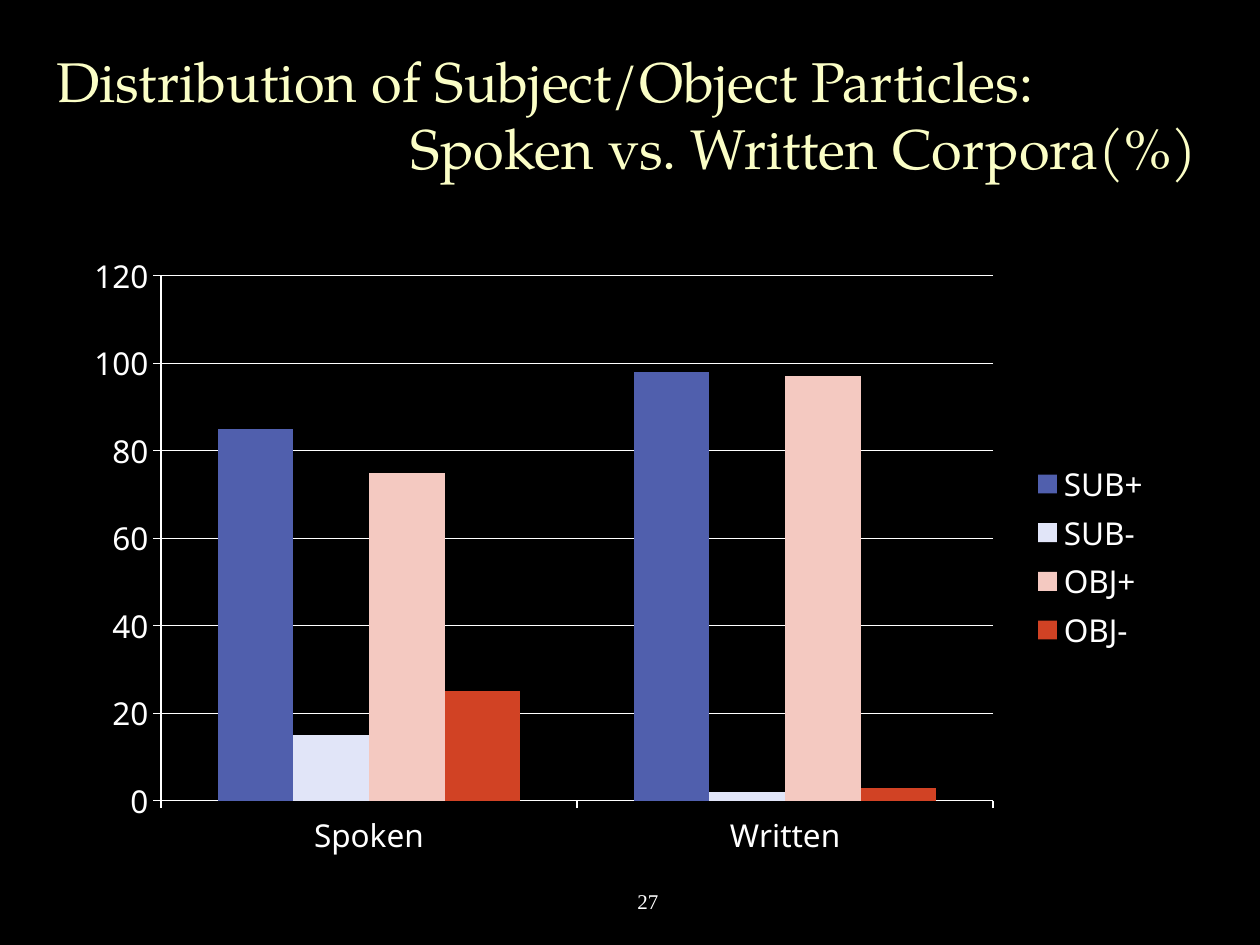
from dataclasses import dataclass

from lxml.etree import SubElement
from pptx import Presentation
from pptx.chart.data import CategoryChartData
from pptx.dml.color import RGBColor
from pptx.enum.chart import XL_CHART_TYPE as ChartType
from pptx.enum.chart import XL_LEGEND_POSITION as LegendPosition
from pptx.enum.chart import XL_TICK_MARK as TickMark
from pptx.enum.text import MSO_ANCHOR as Anchor
from pptx.enum.text import PP_ALIGN as Align
from pptx.oxml.ns import qn
from pptx.util import Cm, Pt

BLACK = RGBColor(0x00, 0x00, 0x00)
WHITE = RGBColor(0xFF, 0xFF, 0xFF)
CREAM = RGBColor(0xFB, 0xFE, 0xC6)
BLUE = RGBColor(0x50, 0x5F, 0xAD)
PALE_BLUE = RGBColor(0xE1, 0xE5, 0xF8)
PINK = RGBColor(0xF4, 0xC9, 0xC1)
RED = RGBColor(0xD1, 0x42, 0x24)


@dataclass
class Box:
    left: float
    top: float
    width: float
    height: float

    def lengths(self) -> list:
        return [Cm(v) for v in (self.left, self.top, self.width, self.height)]


@dataclass
class Particle:
    name: str
    values: tuple
    color: RGBColor


CATEGORIES = ("Spoken", "Written")
PARTICLES = (
    Particle("SUB+", (85, 98), BLUE),
    Particle("SUB-", (15, 2), PALE_BLUE),
    Particle("OBJ+", (75, 97), PINK),
    Particle("OBJ-", (25, 3), RED),
)


def add_text(slide, box: Box, text: str, font_name: str, size: int, color: RGBColor):
    """Add a wrapped, vertically centred text box and return its paragraphs."""
    text_frame = slide.shapes.add_textbox(*box.lengths()).text_frame
    text_frame.word_wrap = True
    text_frame.vertical_anchor = Anchor.MIDDLE
    text_frame.text = text
    for paragraph in text_frame.paragraphs:
        for run in paragraph.runs:
            run.font.name = font_name
            run.font.size = Pt(size)
            run.font.color.rgb = color
    return text_frame.paragraphs


def set_layout(parent, previous_tag: str, fractions: Box, inner: bool = False) -> None:
    """Place a chart part by fractions of the chart's size."""
    for old in parent.findall(qn("c:layout")):
        parent.remove(old)
    layout = SubElement(parent, qn("c:layout"))
    manual = SubElement(layout, qn("c:manualLayout"))
    settings = [("layoutTarget", "inner")] if inner else []
    settings += [("xMode", "edge"), ("yMode", "edge"), ("x", fractions.left),
                 ("y", fractions.top), ("w", fractions.width), ("h", fractions.height)]
    for tag, value in settings:
        SubElement(manual, qn(f"c:{tag}")).set("val", str(value))
    if previous_tag:
        parent.find(qn(previous_tag)).addnext(layout)
    else:
        parent.insert(0, layout)


def add_particle_chart(slide, box: Box) -> None:
    data = CategoryChartData()
    data.categories = CATEGORIES
    for particle in PARTICLES:
        data.add_series(particle.name, particle.values)
    chart = slide.shapes.add_chart(
        ChartType.COLUMN_CLUSTERED, *box.lengths(), data).chart
    chart.has_title = False
    chart.font.name = "Noto Sans"
    chart.font.size = Pt(18)
    chart.font.color.rgb = WHITE

    # Columns
    plot = chart.plots[0]
    plot.gap_width = 150
    plot.overlap = 0
    plot.vary_by_categories = False
    for series, particle in zip(plot.series, PARTICLES):
        series.format.fill.solid()
        series.format.fill.fore_color.rgb = particle.color

    # Axes and gridlines
    value_axis = chart.value_axis
    value_axis.minimum_scale, value_axis.maximum_scale = 0, 120
    value_axis.major_unit = 20
    value_axis.has_major_gridlines = True
    for axis in (chart.category_axis, value_axis):
        axis.major_tick_mark = TickMark.OUTSIDE
    for part in (chart.category_axis, value_axis, value_axis.major_gridlines):
        part.format.line.color.rgb = WHITE
        part.format.line.width = Pt(0.75)

    # Legend
    chart.has_legend = True
    chart.legend.position = LegendPosition.RIGHT
    chart.legend.include_in_layout = False

    plot_area = chart.element.find(".//" + qn("c:plotArea"))
    legend = chart.element.find(".//" + qn("c:legend"))
    set_layout(plot_area, "", Box(0.08, 0.05, 0.77, 0.84), inner=True)
    set_layout(legend, "c:legendPos", Box(0.88, 0.34, 0.12, 0.32))


def main() -> None:
    presentation = Presentation()
    presentation.slide_width, presentation.slide_height = Cm(25.4), Cm(19.05)
    slide = presentation.slides.add_slide(presentation.slide_layouts[6])
    slide.background.fill.solid()
    slide.background.fill.fore_color.rgb = BLACK

    # Title, with its second line indented
    title = add_text(
        slide, Box(0.89, 0.91, 24.51, 2.77),
        "Distribution of Subject/Object Particles:\nSpoken vs. Written Corpora(%)",
        "TeX Gyre Pagella", 32, CREAM)
    title[1]._p.get_or_add_pPr().set("marL", str(Cm(7.14)))

    add_particle_chart(slide, Box(1.5, 4.93, 21.79, 12.6))

    # Slide number
    number = add_text(slide, Box(11.51, 17.65, 3.1, 1.02), "27",
                      "Times New Roman", 12, WHITE)
    number[0].alignment = Align.CENTER

    presentation.save("out.pptx")


if __name__ == "__main__":
    main()
